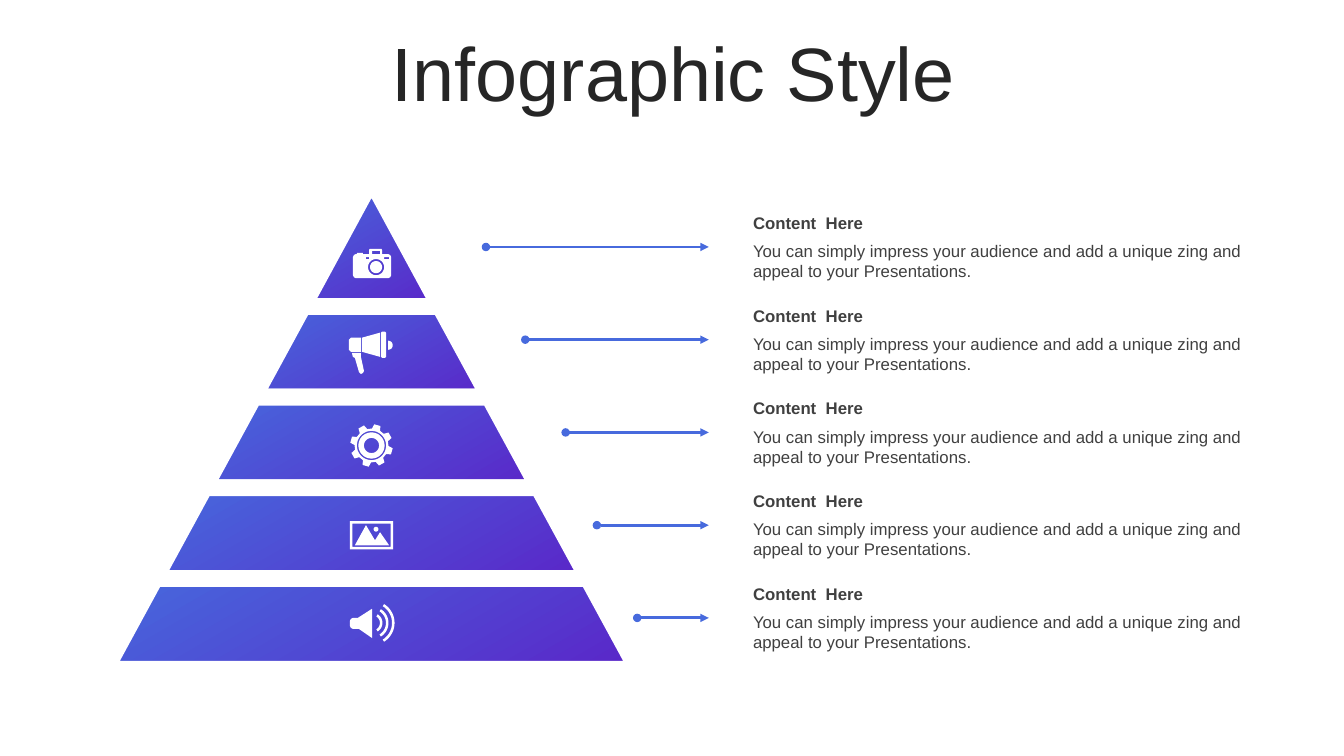
"""Build a five-tier pyramid slide with icons, arrows and notes beside each tier."""
from dataclasses import dataclass
from math import cos, radians, sin

from lxml.etree import SubElement as SubEl
from pptx import Presentation as Deck
from pptx.dml.color import RGBColor as Rgb
from pptx.enum.shapes import MSO_CONNECTOR as Link, MSO_SHAPE as Form
from pptx.enum.text import MSO_ANCHOR as Anchor, MSO_AUTO_SIZE as Fit, PP_ALIGN as Align
from pptx.oxml.ns import qn
from pptx.util import Emu, Inches, Pt

Point = tuple[float, float]
Loop = list[Point]

WHITE = Rgb(0xFF, 0xFF, 0xFF)
BLUE = Rgb(0x46, 0x69, 0xDD)
PURPLE = Rgb(0x5A, 0x26, 0xC8)
ARROW = Rgb(0x47, 0x6A, 0xDD)
DARK = Rgb(0x26, 0x26, 0x26)
GREY = Rgb(0x40, 0x40, 0x40)

CELL = Inches(0.1)
DOT = CELL / 10
MID, SLOPE = 36.85, 0.544
FIRST, STEP = 24.5, 9.2
HEAD = "Content  Here"
BODY = ("You can simply impress your audience and add a unique zing "
        "and appeal to your Presentations.")


@dataclass(frozen=True)
class Icon:
    left: float
    top: float
    loops: list[Loop]


@dataclass(frozen=True)
class Tier:
    top: float
    high: float
    start: float
    icon: Icon


@dataclass(frozen=True)
class Style:
    size: float
    color: Rgb
    bold: bool = False
    align: Align = Align.LEFT
    anchor: Anchor = Anchor.TOP
    fit: Fit = Fit.SHAPE_TO_FIT_TEXT


TITLE = Style(54, DARK, align=Align.CENTER, anchor=Anchor.MIDDLE, fit=Fit.NONE)
LABEL = Style(12, GREY, bold=True, anchor=Anchor.MIDDLE)
NOTE = Style(12, GREY)


def grid(cells: float) -> Emu:
    return Emu(round(cells * CELL))


def polar(x: float, y: float, r: float, turn: float) -> Point:
    return x + r * cos(radians(turn)), y + r * sin(radians(turn))


def arc(x: float, y: float, r: float, first: float = 0, last: float = 360) -> Loop:
    return [polar(x, y, r, first + (last - first) * i / 36) for i in range(37)]


def band(x: float, y: float, r: float, thick: float) -> Loop:
    return arc(x, y, r, -58, 58) + arc(x, y, r - thick, 58, -58)


def box(x1: float, y1: float, x2: float, y2: float) -> Loop:
    return [(x1, y1), (x2, y1), (x2, y2), (x1, y2)]


def cog(x: float, y: float) -> Loop:
    tooth = ((16.8, -14.5), (21.2, -8.5), (21.2, 8.5), (16.8, 14.5))
    return [polar(x, y, r, 45 * i - 74 + turn) for i in range(8) for r, turn in tooth]


CAMERA = Icon(35, 24.7, [
    [(16.5, 0), (28.5, 0), (29, 1), (29, 5), (35, 5), (37, 6), (38, 8), (38, 26),
     (37, 28), (35, 29), (3, 29), (1, 28), (0, 26), (0, 8), (1, 6), (3, 5), (4, 5),
     (4, 4), (10, 4), (10, 5), (16, 5), (16, 1)],
    arc(23, 18, 8), arc(23, 18, 6),
    box(13, 8, 16, 10), box(31, 8, 36, 10), box(19, 2, 27, 5)])
HORN = Icon(34.6, 32.9, [
    [(12, 21), (12, 25), (15, 39), (14, 41), (12, 42), (10, 40), (6, 26), (4, 25), (3, 21)],
    arc(39, 13.5, 4.5, -90, 90),
    [(2, 6), (12, 6), (12, 20), (2, 20), (0, 18), (0, 8)],
    [(31, 1), (31, 25), (13, 20), (13, 6)],
    [(33, 0), (36, 0), (37, 1), (37, 25), (36, 26), (33, 26), (32, 25), (32, 1)]])
GEAR = Icon(34.8, 42.1, [
    cog(20.5, 21), arc(20.5, 21, 14.5), arc(20.5, 21, 13), arc(20.5, 21, 7.5)])
PHOTO = Icon(34.7, 51.7, [
    box(0, 0, 43, 28), box(2.5, 2.5, 40.5, 25.5),
    [(16, 4), (25, 19), (30, 11), (39, 24), (5, 24)], arc(26, 8, 2.4)])
SOUND = Icon(34.7, 59.9, [
    [(22, 5), (22, 34), (9, 25), (3, 25), (1, 24), (0, 22), (0, 17), (1, 15), (3, 14), (8, 14)],
    *(band(22.3, 19, r, 2.5) for r in (10, 16, 22))])

TIERS = [
    Tier(17.9, 12.5, 48.2, CAMERA),
    Tier(30.4, 9, 52.1, HORN),
    Tier(39.4, 9, 56.1, GEAR),
    Tier(48.4, 9, 59.2, PHOTO),
    Tier(57.4, 9, 63.2, SOUND),
]


def add_text(shapes, left: float, top: float, wide: float, high: float,
             words: str, style: Style):
    frame = shapes.add_textbox(grid(left), grid(top), grid(wide), grid(high)).text_frame
    frame.word_wrap = True
    frame.auto_size = style.fit
    frame.vertical_anchor = style.anchor
    para = frame.paragraphs[0]
    para.alignment = style.align
    run = para.add_run()
    run.text = words
    font = run.font
    font.name, font.size, font.bold = "Arial", Pt(style.size), style.bold
    font.color.rgb = style.color
    return para


def add_slab(shapes, tier: Tier, wide: float) -> None:
    slab = shapes.add_shape(Form.TRAPEZOID, grid(MID - wide / 2), grid(tier.top),
                            grid(wide), grid(tier.high))
    slab.adjustments[0] = SLOPE
    slab.shadow.inherit = False
    slab.fill.gradient()
    slab.fill.gradient_angle = 300
    for stop, color, place in zip(slab.fill.gradient_stops, (BLUE, PURPLE), (0, 1)):
        stop.color.rgb = color
        stop.position = place
    slab.line.color.rgb = WHITE
    slab.line.width = Pt(12)


def add_arrow(shapes, start: float, row: float) -> None:
    arrow = shapes.add_connector(Link.STRAIGHT, grid(start), grid(row), grid(70.3), grid(row))
    arrow.line.color.rgb = ARROW
    arrow.line.width = Pt(2)
    line = arrow.line._get_or_add_ln()
    SubEl(line, qn("a:headEnd"), type="oval")
    SubEl(line, qn("a:tailEnd"), type="triangle")
    SubEl(arrow._element.spPr, qn("a:effectLst"))


def add_icon(shapes, icon: Icon) -> None:
    loops = [[(x * DOT, y * DOT) for x, y in loop] for loop in icon.loops]
    pen = shapes.build_freeform(*loops[0][0])
    for i, loop in enumerate(loops):
        if i:
            pen.move_to(*loop[0])
        pen.add_line_segments(loop[1:], close=True)
    shape = pen.convert_to_shape(grid(icon.left), grid(icon.top))
    shape.shadow.inherit = False
    shape.fill.solid()
    shape.fill.fore_color.rgb = WHITE
    shape.line.fill.background()


def main() -> None:
    deck = Deck()
    deck.slide_width, deck.slide_height = Inches(13.33), Inches(7.5)
    shapes = deck.slides.add_slide(deck.slide_layouts[6]).shapes
    title = add_text(shapes, 3.5, 3.7, 126.6, 7.9, "Infographic Style", TITLE)
    title.line_spacing = 0.9
    title.space_before = Pt(10)
    for i, tier in enumerate(TIERS):
        row = FIRST + STEP * i
        add_slab(shapes, tier, 13.55 + 2 * SLOPE * 9 * i)
        add_arrow(shapes, tier.start, row)
        add_text(shapes, 73.7, row - 3.9, 51.1, 3, HEAD, LABEL)
        add_text(shapes, 73.7, row - 1.1, 51.1, 5, BODY, NOTE)
        add_icon(shapes, tier.icon)
    deck.save("out.pptx")


if __name__ == "__main__":
    main()
